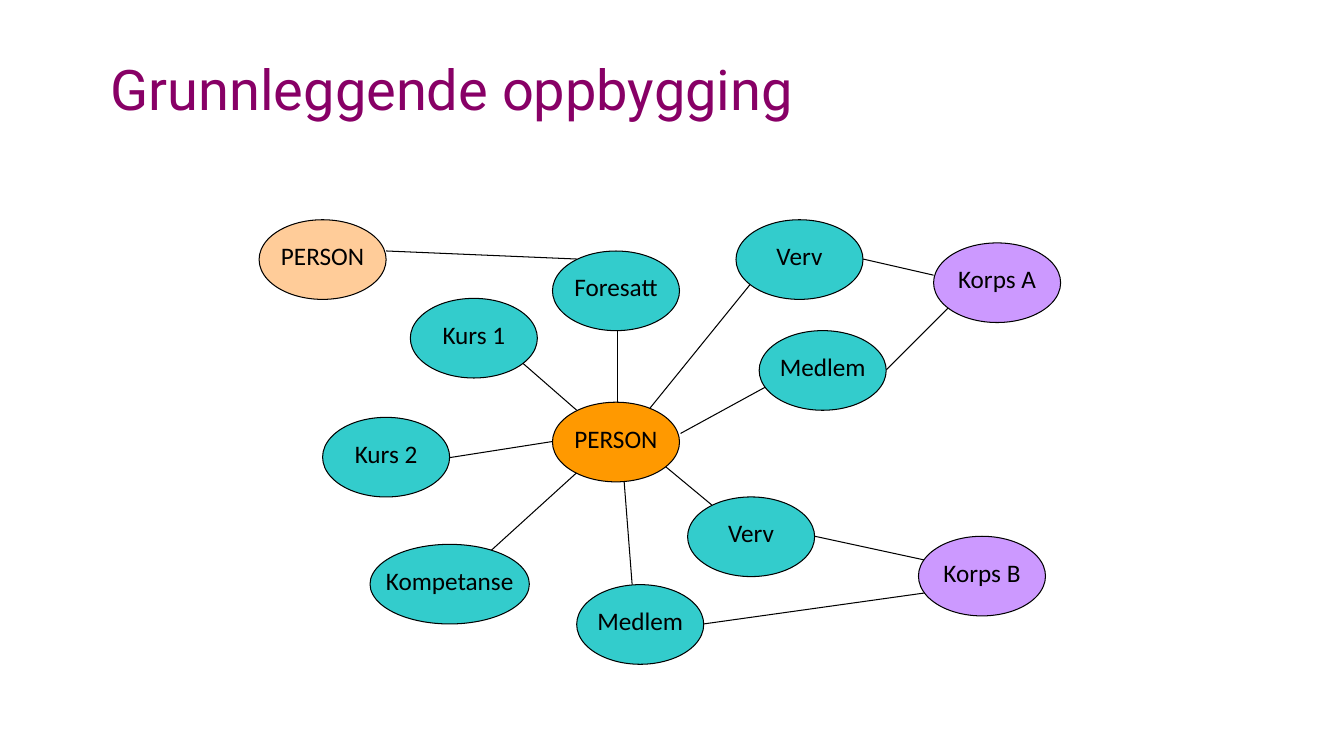
from typing import NamedTuple

from pptx import Presentation
from pptx.dml.color import RGBColor
from pptx.enum.shapes import MSO_CONNECTOR, MSO_SHAPE
from pptx.enum.text import MSO_ANCHOR, PP_ALIGN
from pptx.oxml.ns import qn
from pptx.slide import Slide
from pptx.text.text import _Paragraph
from pptx.util import Inches, Pt
from lxml.etree import SubElement

BLACK = RGBColor(0x00, 0x00, 0x00)
PLUM = RGBColor(0x88, 0x00, 0x66)
PEACH = RGBColor(0xFF, 0xCC, 0x99)
ORANGE = RGBColor(0xFF, 0x99, 0x00)
TEAL = RGBColor(0x33, 0xCC, 0xCC)
LILAC = RGBColor(0xCC, 0x99, 0xFF)

STROKE = Pt(0.75)
HEIGHT = 0.79


class Node(NamedTuple):
    label: str
    left: float
    top: float
    fill: RGBColor = TEAL
    width: float = 1.26


class Link(NamedTuple):
    x1: float
    y1: float
    x2: float
    y2: float


NODES = [
    Node("PERSON", 2.57, 2.18, PEACH),
    Node("Foresatt", 5.48, 2.49),
    Node("Kurs 1", 4.07, 2.96),
    Node("Kurs 2", 3.2, 4.14),
    Node("Kompetanse", 3.67, 5.4, width=1.58),
    Node("PERSON", 5.48, 3.99, ORANGE),
    Node("Medlem", 5.72, 5.8),
    Node("Verv", 6.82, 4.93),
    Node("Medlem", 7.53, 3.28),
    Node("Verv", 7.3, 2.18),
    Node("Korps A", 9.26, 2.41, LILAC),
    Node("Korps B", 9.11, 5.32, LILAC),
]

LINKS = [
    # From the central person
    Link(6.12, 3.99, 6.12, 3.28),
    Link(5.72, 4.07, 5.17, 3.59),
    Link(5.48, 4.38, 4.46, 4.54),
    Link(5.72, 4.69, 4.85, 5.48),
    Link(6.19, 4.77, 6.27, 5.8),
    Link(6.59, 4.62, 7.06, 5.01),
    Link(6.75, 4.3, 7.61, 3.83),
    Link(6.43, 4.07, 7.45, 2.81),
    # From guardian to the other person
    Link(5.72, 2.57, 3.83, 2.49),
    # From roles to the bands
    Link(8.08, 5.32, 9.19, 5.56),
    Link(6.98, 6.19, 9.19, 5.88),
    Link(8.79, 3.67, 9.42, 3.04),
    Link(8.56, 2.57, 9.26, 2.73),
]


def add_run(para: _Paragraph, text: str, face: str, size: int,
            color: RGBColor) -> None:
    run = para.add_run()
    run.text = text
    run.font.name = face
    run.font.size = Pt(size)
    run.font.color.rgb = color


def add_title(slide: Slide, text: str) -> None:
    box = slide.shapes.add_textbox(
        Inches(1), Inches(0.29), Inches(11.33), Inches(1.25))
    frame = box.text_frame
    frame.word_wrap = True
    frame.vertical_anchor = MSO_ANCHOR.MIDDLE
    para = frame.paragraphs[0]
    para.line_spacing = 0.9
    add_run(para, text, "Roboto", 40, PLUM)


def add_link(slide: Slide, link: Link) -> None:
    line = slide.shapes.add_connector(
        MSO_CONNECTOR.STRAIGHT, *(Inches(value) for value in link))
    line.line.color.rgb = BLACK
    line.line.width = STROKE
    SubElement(line._element.spPr, qn("a:effectLst"))


def add_node(slide: Slide, node: Node) -> None:
    oval = slide.shapes.add_shape(
        MSO_SHAPE.OVAL, Inches(node.left), Inches(node.top),
        Inches(node.width), Inches(HEIGHT))
    oval.shadow.inherit = False
    oval.fill.solid()
    oval.fill.fore_color.rgb = node.fill
    oval.line.color.rgb = BLACK
    oval.line.width = STROKE

    # The label sits slightly above the middle
    frame = oval.text_frame
    frame.word_wrap = False
    frame.vertical_anchor = MSO_ANCHOR.MIDDLE
    frame.margin_left = frame.margin_right = frame.margin_top = 0
    frame.margin_bottom = Inches(0.08)
    para = frame.paragraphs[0]
    para.alignment = PP_ALIGN.CENTER
    add_run(para, node.label, "Calibri", 18, BLACK)


def main() -> None:
    deck = Presentation()
    deck.slide_width = Inches(13.33)
    deck.slide_height = Inches(7.5)
    slide = deck.slides.add_slide(deck.slide_layouts[6])

    add_title(slide, "Grunnleggende oppbygging")
    for link in LINKS:
        add_link(slide, link)
    for node in NODES:
        add_node(slide, node)

    deck.save("out.pptx")


if __name__ == "__main__":
    main()
